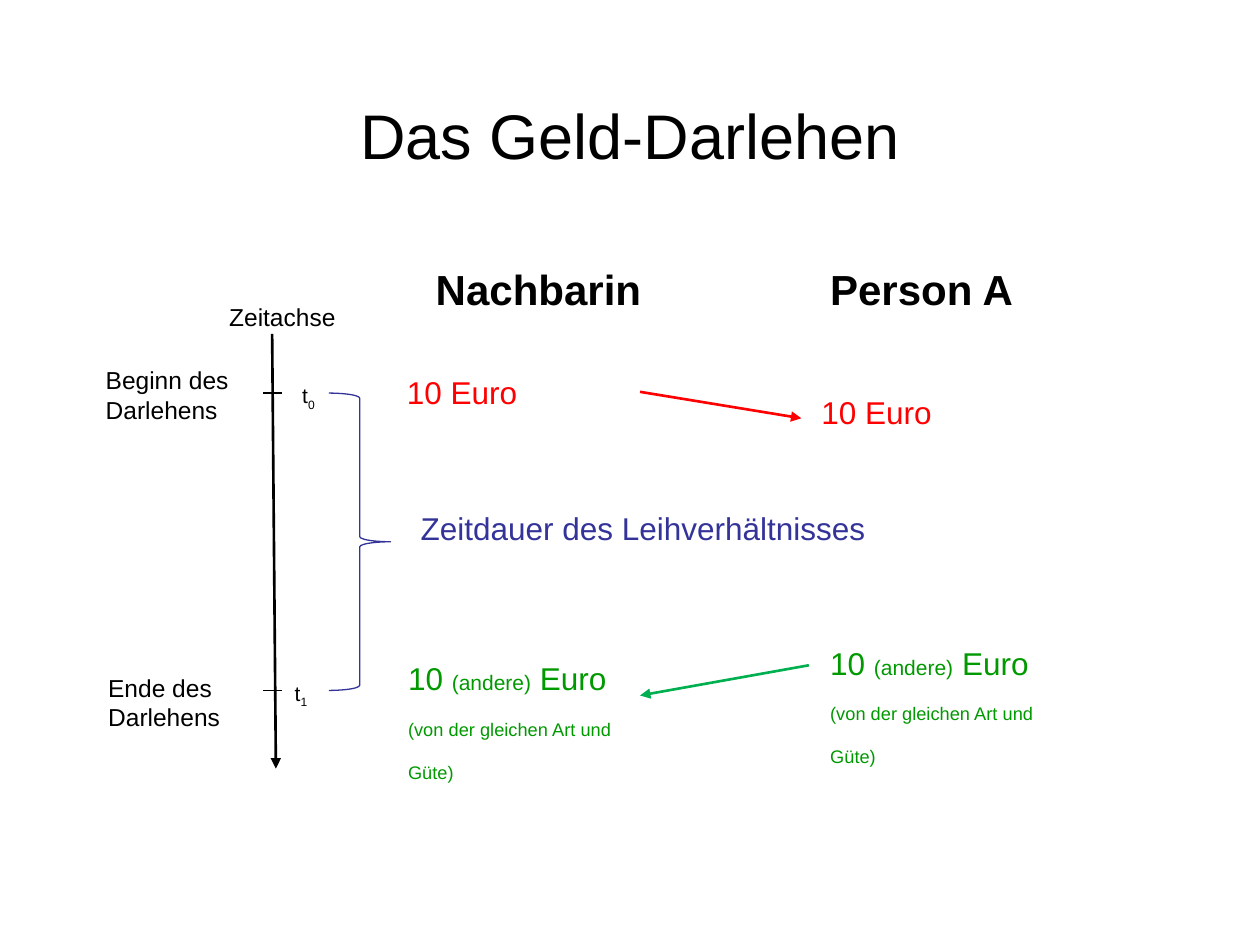
from lxml import etree
from pptx import Presentation
from pptx.dml.color import RGBColor
from pptx.enum.shapes import MSO_CONNECTOR, MSO_SHAPE
from pptx.enum.text import MSO_ANCHOR, MSO_AUTO_SIZE, PP_ALIGN
from pptx.oxml.ns import qn
from pptx.util import Inches, Pt

FONT = "Arial"
BLACK = RGBColor(0x00, 0x00, 0x00)
RED = RGBColor(0xFF, 0x00, 0x00)
GREEN = RGBColor(0x00, 0x99, 0x00)
ARROW_GREEN = RGBColor(0x00, 0xB0, 0x50)
BLUE = RGBColor(0x33, 0x33, 0x99)


def add_run(p, text, size, color, bold=False, subscript=False):
    r = p.add_run()
    r.text = text
    r.font.name = FONT
    r.font.size = Pt(size)
    r.font.bold = bold
    r.font.color.rgb = color
    if subscript:
        r.font._element.set("baseline", "-25000")


def add_box(s, x, y, w, h, wrap=False):
    """Add an empty text box and return its text frame."""
    tf = s.shapes.add_textbox(Inches(x), Inches(y), Inches(w), Inches(h)).text_frame
    tf.word_wrap = wrap
    tf.auto_size = MSO_AUTO_SIZE.SHAPE_TO_FIT_TEXT
    return tf


def add_label(s, x, y, w, h, text, size, color=BLACK, bold=False, wrap=False):
    p = add_box(s, x, y, w, h, wrap).paragraphs[0]
    for i, line in enumerate(text.split("\n")):
        if i:
            p.add_line_break()
        add_run(p, line, size, color, bold)


def add_line(s, x1, y1, x2, y2, color, width, arrow=False):
    line = s.shapes.add_connector(
        MSO_CONNECTOR.STRAIGHT, Inches(x1), Inches(y1), Inches(x2), Inches(y2))
    line.line.color.rgb = color
    line.line.width = Pt(width)
    if arrow:
        etree.SubElement(line.line._get_or_add_ln(), qn("a:tailEnd"), type="triangle")
    etree.SubElement(line._element.spPr, qn("a:effectLst"))


def add_title(s, x, y, w, h, text):
    title = s.shapes.title
    title.left, title.top = Inches(x), Inches(y)
    title.width, title.height = Inches(w), Inches(h)
    tf = title.text_frame
    tf.vertical_anchor = MSO_ANCHOR.MIDDLE
    p = tf.paragraphs[0]
    p.alignment = PP_ALIGN.CENTER
    add_run(p, text, 36, BLACK)


def add_time_axis(s, x, y, h):
    """Axis from (x, y) with its start and end marks and the loan period."""
    add_label(s, x - 0.44, y - 0.3, 1.05, 0.34, "Zeitachse", 14)
    add_line(s, x, y, x + 0.03, y + h, BLACK, 1.5, arrow=True)

    start, end = y + 0.47, y + 2.83
    marks = [
        (start, "0", x + 0.14, "Beginn des\nDarlehens", x - 1.42, 1.18, -0.27),
        (end, "1", x + 0.08, "Ende des\nDarlehens", x - 1.4, 1.09, -0.19),
    ]
    for tick, index, t_x, caption, cap_x, cap_w, cap_dy in marks:
        add_line(s, x - 0.07, tick, x + 0.08, tick, BLACK, 0.75)
        p = add_box(s, t_x, tick - 0.13, 0.31, 0.3).paragraphs[0]
        add_run(p, "t", 12, BLACK)
        add_run(p, index, 12, BLACK, subscript=True)
        add_label(s, cap_x, tick + cap_dy, cap_w, 0.57, caption, 14)

    # Loan period
    brace = s.shapes.add_shape(
        MSO_SHAPE.RIGHT_BRACE, Inches(x + 0.45), Inches(start), Inches(0.49), Inches(end - start))
    brace.shadow.inherit = False
    brace.fill.background()
    brace.line.color.rgb = BLUE
    brace.line.width = Pt(0.75)
    add_label(s, x + 1.08, y + 1.34, 3.76, 0.4, "Zeitdauer des Leihverhältnisses", 18, BLUE)


def add_repayment(s, x, y, w, h):
    tf = add_box(s, x, y, w, h, wrap=True)
    p = tf.paragraphs[0]
    for text, size in (("10 ", 18), ("(andere)", 12), (" Euro", 18)):
        add_run(p, text, size, GREEN)
    add_run(tf.add_paragraph(), "(von der gleichen Art und Güte)", 18, GREEN, subscript=True)


def add_party(s, name, name_box, loan_pos, repayment_pos):
    """Heading of one party with the sums it gives and receives."""
    add_label(s, *name_box, name, 24, bold=True)
    add_label(s, *loan_pos, 1.95, 0.4, "10 Euro", 18, RED, wrap=True)
    add_repayment(s, *repayment_pos, 2.21, 0.81)


def main():
    prs = Presentation()
    prs.slide_width, prs.slide_height = Inches(10), Inches(7.5)
    s = prs.slides.add_slide(prs.slide_layouts[5])

    add_title(s, 0.5, 0.44, 9, 1.25, "Das Geld-Darlehen")
    add_time_axis(s, 2.16, 2.65, 3.45)
    add_party(s, "Nachbarin", (3.36, 2.04, 1.85, 0.5), (3.13, 2.91), (3.14, 5.18))
    add_party(s, "Person A", (6.49, 2.04, 1.67, 0.5), (6.42, 3.07), (6.49, 5.06))

    # Loan handed over, then paid back
    add_line(s, 5.08, 3.11, 6.36, 3.32, RED, 1.5, arrow=True)
    add_line(s, 6.42, 5.28, 5.08, 5.52, ARROW_GREEN, 1.5, arrow=True)

    prs.save("out.pptx")


if __name__ == "__main__":
    main()
